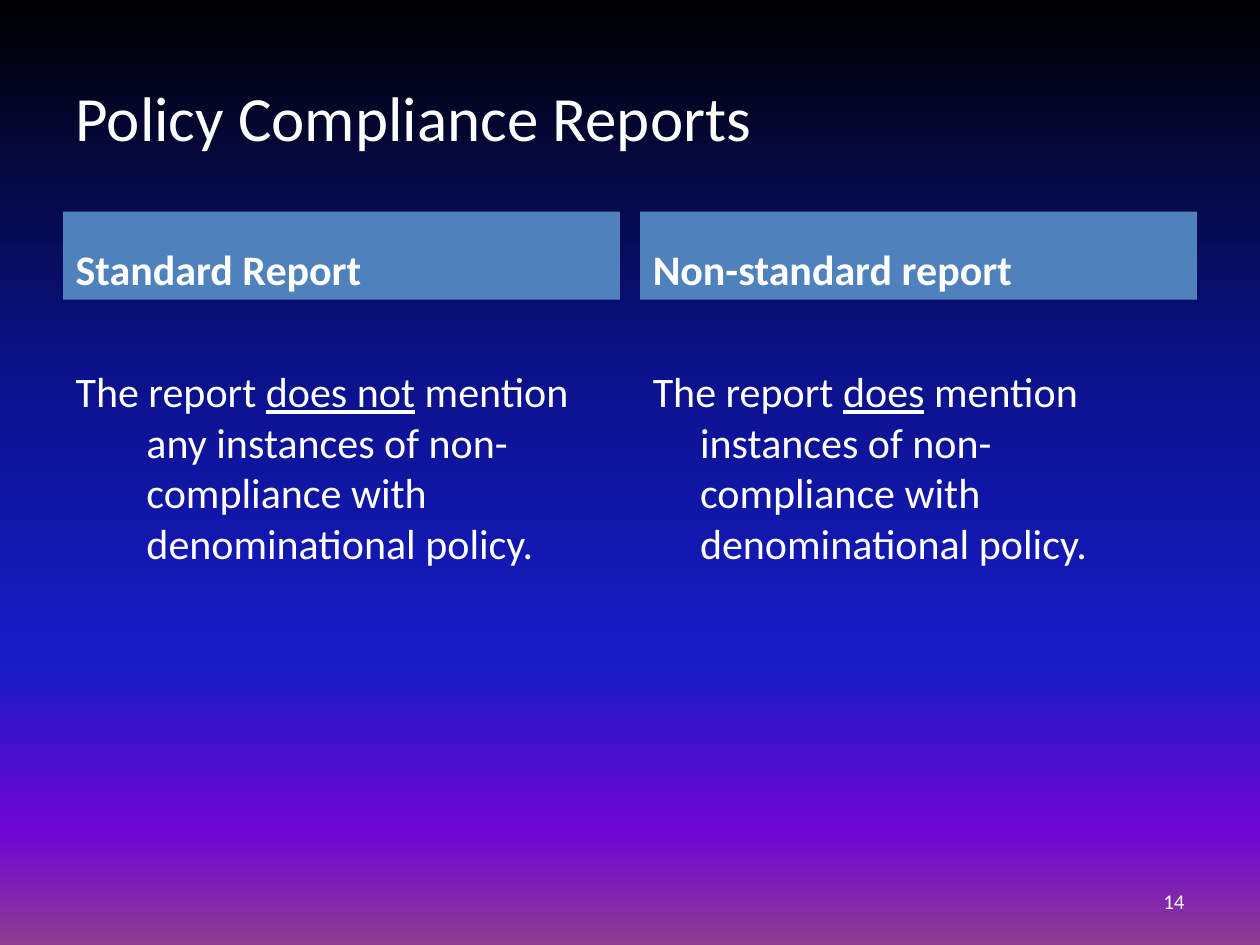
from copy import deepcopy

from pptx import Presentation
from pptx import util as u
from pptx.dml.color import RGBColor
from pptx.enum import text
from pptx.oxml.ns import qn

WHITE = RGBColor(0xFF, 0xFF, 0xFF)
HEADING_BLUE = RGBColor(0x4F, 0x81, 0xBD)
BACKDROP = [
    (0, RGBColor(0x00, 0x00, 0x00)),
    (0.4, RGBColor(0x0A, 0x12, 0x8C)),
    (0.7, RGBColor(0x18, 0x1C, 0xC7)),
    (0.88, RGBColor(0x70, 0x05, 0xD4)),
    (1, RGBColor(0x8C, 0x3D, 0x91)),
]
MARGIN = 36
COLUMN_WIDTH = 318.2
COLUMN_STEP = 329.8
COMPARISON_LAYOUT = 4


class ReportSlide:
    font = "Calibri"

    def __init__(self, deck):
        self.slide = deck.slides.add_slide(deck.slide_layouts[COMPARISON_LAYOUT])

    def backdrop(self, colours):
        fill = self.slide.background.fill
        fill.gradient()
        fill.gradient_angle = 270
        stop_list = self.slide.element.find(".//" + qn("a:gsLst"))
        while len(stop_list) < len(colours):
            stop_list.append(deepcopy(stop_list[0]))
        for stop, (position, colour) in zip(fill.gradient_stops, colours):
            stop.position = position
            stop.color.rgb = colour

    def place(self, shape, left, top, width, height, anchor):
        shape.left, shape.top = u.Pt(left), u.Pt(top)
        shape.width, shape.height = u.Pt(width), u.Pt(height)
        frame = shape.text_frame
        frame.word_wrap = True
        frame.auto_size = text.MSO_AUTO_SIZE.NONE
        frame.vertical_anchor = anchor
        return frame

    def format(self, paragraph, size, align=text.PP_ALIGN.LEFT, bold=False):
        paragraph.alignment = align
        for run in paragraph.runs:
            run.font.name = self.font
            run.font.size = u.Pt(size)
            run.font.bold = bold
            run.font.color.rgb = WHITE

    def title(self, words):
        frame = self.place(self.slide.shapes.title, MARGIN, 21.6, 648, 90,
                           text.MSO_ANCHOR.MIDDLE)
        frame.text = words
        self.format(frame.paragraphs[0], 36)

    def heading(self, index, left, words):
        band = self.slide.placeholders[index]
        frame = self.place(band, left, 120.9, COLUMN_WIDTH, 50.4,
                           text.MSO_ANCHOR.BOTTOM)
        band.fill.solid()
        band.fill.fore_color.rgb = HEADING_BLUE
        frame.text = words
        self.format(frame.paragraphs[0], 24, bold=True)

    def description(self, index, left, parts, indent):
        """Write a hanging paragraph whose second part is underlined."""
        frame = self.place(self.slide.placeholders[index], left, 171.3,
                           COLUMN_WIDTH, 311.2, text.MSO_ANCHOR.TOP)
        frame.margin_top = u.Pt(37.8)
        paragraph = frame.paragraphs[0]
        for position, part in enumerate(parts):
            run = paragraph.add_run()
            run.text = part
            run.font.underline = position == 1
        self.format(paragraph, 24)
        paragraph.space_before = u.Pt(0)
        properties = paragraph._p.get_or_add_pPr()
        properties.set("marL", str(u.Pt(indent)))
        properties.set("indent", str(-u.Pt(indent)))
        properties.append(properties.makeelement(qn("a:buNone"), {}))

    def page_number(self, number):
        box = self.slide.shapes.add_textbox(0, 0, 0, 0)
        frame = self.place(box, 516, 500.5, 168, 28.8, text.MSO_ANCHOR.MIDDLE)
        frame.text = str(number)
        self.format(frame.paragraphs[0], 12, text.PP_ALIGN.RIGHT)


def main():
    deck = Presentation()
    deck.slide_width, deck.slide_height = u.Pt(720), u.Pt(540)
    page = ReportSlide(deck)
    page.backdrop(BACKDROP)
    page.title("Policy Compliance Reports")

    reports = [
        ("Standard Report", 40.5,
         ("The report ", "does not",
          " mention any instances of non-compliance with denominational policy.")),
        ("Non-standard report", 27,
         ("The report ", "does",
          " mention instances of non-compliance with denominational policy.")),
    ]
    for column, (heading, indent, parts) in enumerate(reports):
        left = MARGIN + column * COLUMN_STEP
        page.heading(2 * column + 1, left, heading)
        page.description(2 * column + 2, left, parts, indent)

    page.page_number(14)
    deck.save("out.pptx")


if __name__ == "__main__":
    main()
